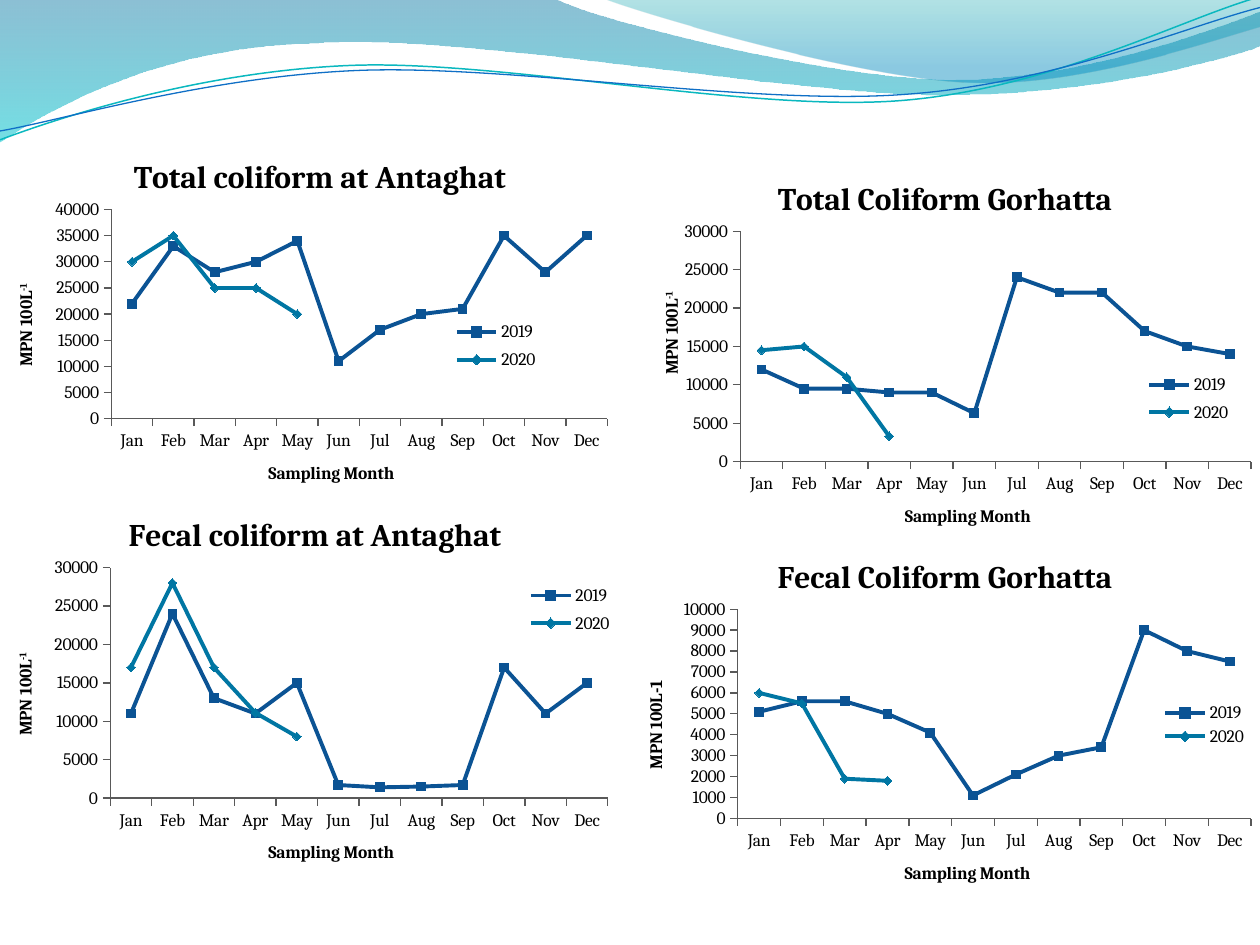
from math import cos, radians, sin
from pptx import Presentation
from pptx.chart.data import CategoryChartData as Data
from pptx.dml.color import RGBColor as Rgb
from pptx.enum.chart import XL_CHART_TYPE as Kind, XL_LEGEND_POSITION as Side
from pptx.enum.chart import XL_MARKER_STYLE as Mark, XL_TICK_MARK as Tick
from pptx.oxml import parse_xml
from pptx.oxml.ns import nsdecls, qn
from pptx.util import Inches, Pt

HUES = {
    "text": "000000", "axis": "595959", "2019": "0F6FC6", "2020": "009DD9",
    "deep": "0074A1", "aqua": "00C6CF", "teal": "00A1A9", "sky": "008BBF",
    "cyan": "0AB8BF", "blue": "0F6FC6",
}
MONTHS = "Jan Feb Mar Apr May Jun Jul Aug Sep Oct Nov Dec".split()
MARKS = {"2019": Mark.SQUARE, "2020": Mark.DIAMOND}
TILT = 357.3

BANDS = [
    ([(0, 0), (4.4, -0.01),
      (4.76, 0.17, 6.64, 0.63, 7.58, 0.63), (8.53, 0.63, 9.58, 0.26, 10, 0.09),
      (10.01, 0.36),
      (9.83, 0.44, 8.7, 0.76, 7.46, 0.75), (6.22, 0.75, 3.82, 0.28, 2.57, 0.34),
      (1.29, 0.36, 0.46, 0.83, -0.01, 1.13)],
     [(0, "deep", 45), (1, "aqua", 55)]),
    ([(4.79, -0.01),
      (5.09, 0.11, 6.82, 0.62, 7.69, 0.65), (8.56, 0.69, 9.61, 0.32, 10, 0.21),
      (10, 0)],
     [(0, "teal", 30), (0.8, "sky", 45)]),
]
WAVES = [
    ([(0, 1.11), (0.48, 0.93, 1.58, 0.57, 2.77, 0.52),
      (3.95, 0.47, 5.93, 0.89, 7.13, 0.8), (8.33, 0.71, 9.38, 0.15, 9.98, -0.02)],
     (4.99, 0.57), "cyan", 0.85),
    ([(0, 1.04), (0.47, 0.96, 1.64, 0.61, 2.83, 0.56),
      (4.03, 0.51, 5.97, 0.84, 7.17, 0.75), (8.36, 0.67, 9.41, 0.21, 10, 0.06)],
     (5, 0.59), "blue", 0.75),
]
CHARTS = [
    dict(title="Total coliform at Antaghat", box=(0, 1.08, 5.08, 2.83),
         plot=(17.4, 20.6, 77.5, 58.7), key=(70, 50, 15, 17.7),
         top=40000, step=5000, rows={
             "2019": [22000, 33000, 28000, 30000, 34000, 11000,
                      17000, 20000, 21000, 35000, 28000, 35000],
             "2020": [30000, 35000, 25000, 25000, 20000]}),
    dict(title="Fecal coliform at Antaghat", box=(0, 3.92, 5, 3),
         plot=(17.5, 19.5, 79, 61), key=(83, 22.2, 15, 16.7),
         top=30000, step=5000, rows={
             "2019": [11000, 24000, 13000, 11000, 15000, 1700,
                      1400, 1500, 1700, 17000, 11000, 15000],
             "2020": [17000, 28000, 17000, 11100, 8000]}),
    dict(title="Total Coliform Gorhatta", box=(5, 1.25, 5, 3),
         plot=(17.5, 19.5, 81.1, 61), key=(81.2, 55.4, 15, 16.7),
         top=30000, step=5000, side=(4.1, 34.5), rows={
             "2019": [12000, 9500, 9500, 9000, 9000, 6300,
                      24000, 22000, 22000, 17000, 15000, 14000],
             "2020": [14500, 15000, 11000, 3300]}),
    dict(title="Fecal Coliform Gorhatta", box=(5, 4.25, 5, 3),
         plot=(17.1, 19.5, 81.5, 55.4), key=(83.7, 43.3, 15, 13.5),
         top=10000, step=1000, raised=False, rows={
             "2019": [5100, 5600, 5600, 5000, 4100, 1100,
                      2100, 3000, 3400, 9000, 8000, 7500],
             "2020": [6000, 5500, 1900, 1800]}),
]


def hue(name):
    return Rgb.from_string(HUES[name])


def pairs(part):
    return list(zip(part[::2], part[1::2]))


def turn(path, mid, angle):
    c, s = cos(radians(angle)), sin(radians(angle))
    done = []
    for part in path:
        spots = [(x - mid[0], y - mid[1]) for x, y in pairs(part)]
        done.append(sum(((mid[0] + x * c - y * s, mid[1] + x * s + y * c)
                         for x, y in spots), ()))
    return done


def place(node, spot, index, inner=False):
    for old in node.findall(qn("c:layout")):
        node.remove(old)
    target = '<c:layoutTarget val="inner"/>' if inner else ""
    modes = '<c:xMode val="edge"/><c:yMode val="edge"/>'
    sizes = "".join(f'<c:{n} val="{v / 100:.3f}"/>' for n, v in zip("xywh", spot))
    node.insert(index, parse_xml(
        f'<c:layout {nsdecls("c")}><c:manualLayout>{target}{modes}{sizes}'
        "</c:manualLayout></c:layout>"))


class Deck:
    font = "Cambria"
    size = 10

    def __init__(self, wide, high):
        self.prs = Presentation()
        self.prs.slide_width, self.prs.slide_height = Inches(wide), Inches(high)
        self.slide = self.prs.slides.add_slide(self.prs.slide_layouts[6])

    def style(self, font, size, bold):
        font.name, font.size, font.bold = self.font, Pt(size), bold
        font.color.rgb = hue("text")

    def curve(self, path, close):
        ends = [(Inches(p[-2]), Inches(p[-1])) for p in path]
        pen = self.slide.shapes.build_freeform(*ends[0])
        pen.add_line_segments(ends[1:], close=close)
        shape = pen.convert_to_shape()
        shape.shadow.inherit = False
        lines = list(shape._element.iter(qn("a:lnTo")))
        for line, part in zip(lines, path[1:]):
            if len(part) == 6:
                spots = "".join(
                    f'<a:pt x="{Inches(x) - shape.left}" y="{Inches(y) - shape.top}"/>'
                    for x, y in pairs(part))
                line.getparent().replace(line, parse_xml(
                    f'<a:cubicBezTo {nsdecls("a")}>{spots}</a:cubicBezTo>'))
        return shape

    def band(self, path, stops):
        shape = self.curve(path, True)
        shape.line.fill.background()
        shape.fill.gradient()
        shape.fill.gradient_angle = 270
        for stop, (spot, name, alpha) in zip(shape.fill.gradient_stops, stops):
            stop.position = spot
            stop.color.rgb = hue(name)
            tint = stop._gs.find(qn("a:srgbClr"))
            tint.append(parse_xml(
                f'<a:alpha {nsdecls("a")} val="{alpha * 1000}"/>'))

    def wave(self, path, mid, name, width):
        shape = self.curve(turn(path, mid, -TILT), False)
        shape.rotation = TILT
        shape.fill.background()
        shape.line.color.rgb = hue(name)
        shape.line.width = Pt(width)

    def label(self, owner, parts, size):
        para = owner.text_frame.paragraphs[0]
        for text in parts:
            run = para.add_run()
            run.text = text
            self.style(run.font, size, True)
        return para.runs

    def axis(self, axis, parts):
        axis.has_major_gridlines = False
        axis.major_tick_mark = Tick.OUTSIDE
        axis.format.line.color.rgb = hue("axis")
        self.style(axis.tick_labels.font, self.size, False)
        return self.label(axis.axis_title, parts, self.size)

    def shade(self, color, name):
        color.rgb = hue(name)
        color.brightness = -0.25

    def chart(self, title, box, plot, key, top, step, rows, raised=True, side=None):
        data = Data()
        data.categories = MONTHS
        for name, vals in rows.items():
            data.add_series(name, vals)
        chart = self.slide.shapes.add_chart(
            Kind.LINE_MARKERS, *map(Inches, box), data).chart
        self.style(chart.font, self.size, False)
        self.label(chart.chart_title, [title], 18)
        chart.chart_title.include_in_layout = False
        self.axis(chart.category_axis, ["Sampling Month"])
        scale = chart.value_axis
        runs = self.axis(scale, ["MPN 100L", "-1"] if raised else ["MPN 100L-1"])
        if raised:
            runs[1].font._element.set("baseline", "30000")
        if side:
            place(scale.axis_title._element, side, 1)
        scale.minimum_scale, scale.maximum_scale = 0, top
        scale.major_unit = step
        chart.plots[0].vary_by_categories = False
        for row in chart.plots[0].series:
            row.smooth = False
            row.format.line.width = Pt(2.25)
            row.marker.style, row.marker.size = MARKS[row.name], 5
            look = row.marker.format
            look.fill.solid()
            for color in (row.format.line.color, look.fill.fore_color, look.line.color):
                self.shade(color, row.name)
        chart.has_legend = True
        chart.legend.position = Side.RIGHT
        chart.legend.include_in_layout = False
        self.style(chart.legend.font, self.size, False)
        place(chart.legend._element, key, 1)
        place(chart._chartSpace.chart.plotArea, plot, 0, True)


def main():
    deck = Deck(10, 7.5)
    for band in BANDS:
        deck.band(*band)
    for wave in WAVES:
        deck.wave(*wave)
    for chart in CHARTS:
        deck.chart(**chart)
    deck.prs.save("out.pptx")


if __name__ == "__main__":
    main()
